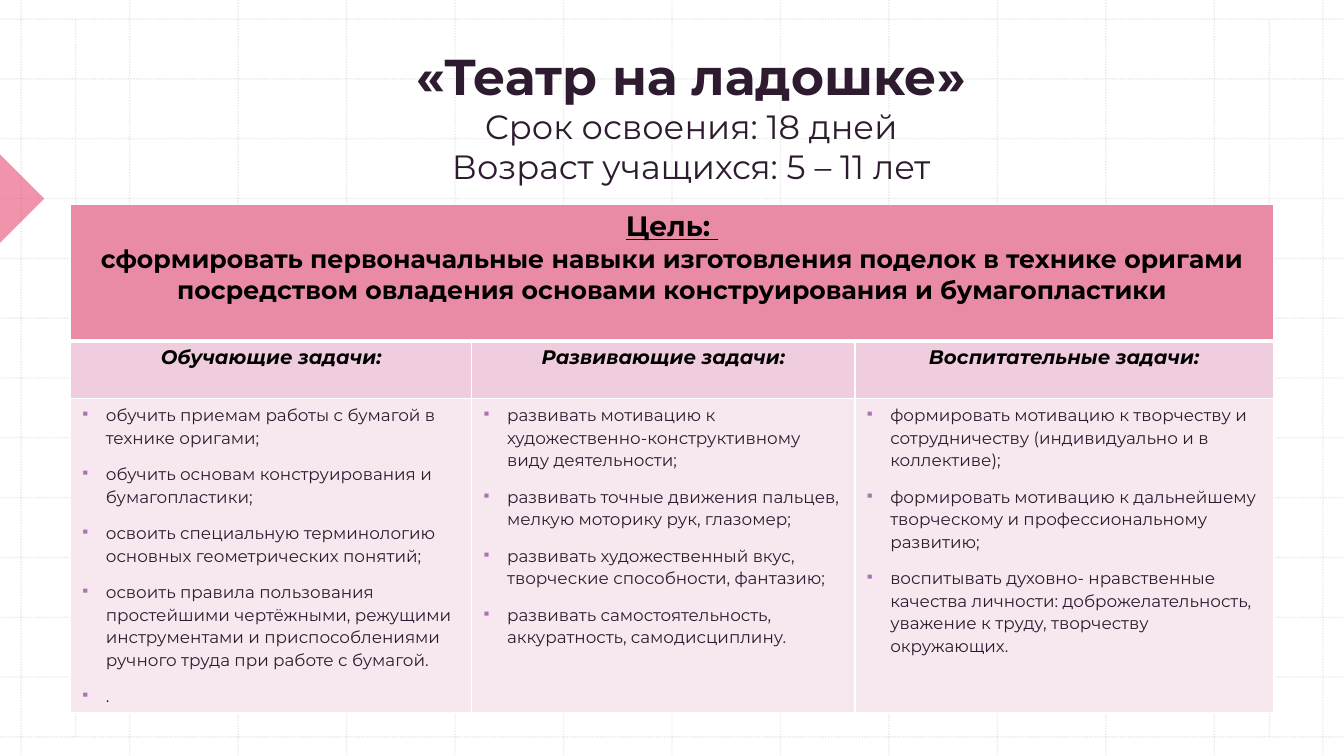
from lxml import etree
from pptx import Presentation
from pptx import util as u
from pptx.dml.color import RGBColor
from pptx.enum import dml, shapes, text
from pptx.oxml.ns import qn

# Content
TITLE_LINES = [  # wording, size, bold
    ("«Театр на ладошке»", 36, True),
    ("Срок освоения: 18 дней", 24, False),
    ("Возраст учащихся: 5 – 11 лет", 24, False),
]
GOAL_LABEL = "Цель: "
GOAL = ("сформировать первоначальные навыки изготовления поделок в технике оригами "
        "посредством овладения основами конструирования и бумагопластики")
TASKS = {
    "Обучающие задачи:": [
        "обучить приемам работы с бумагой в технике оригами;",
        "обучить основам конструирования и бумагопластики;",
        "освоить специальную терминологию основных геометрических понятий;",
        "освоить правила пользования простейшими чертёжными, режущими "
        "инструментами и приспособлениями ручного труда при работе с бумагой.",
        ".",
    ],
    "Развивающие задачи:": [
        "развивать мотивацию к художественно-конструктивному виду деятельности;",
        "развивать точные движения пальцев, мелкую моторику рук, глазомер;",
        "развивать художественный вкус, творческие способности, фантазию;",
        "развивать самостоятельность, аккуратность, самодисциплину.",
    ],
    "Воспитательные задачи:": [
        "формировать мотивацию к творчеству и сотрудничеству "
        "(индивидуально и в коллективе);",
        "формировать мотивацию к дальнейшему творческому и профессиональному развитию;",
        "воспитывать духовно- нравственные качества личности: доброжелательность, "
        "уважение к труду, творчеству окружающих.",
    ],
}

# Style
FONT = "Montserrat"
BLACK = RGBColor(0x00, 0x00, 0x00)
WHITE = RGBColor(0xFF, 0xFF, 0xFF)
PLUM = RGBColor(0x2E, 0x1B, 0x30)
VIOLET = RGBColor(0xAB, 0x74, 0xB1)
CRIMSON = RGBColor(0xE7, 0x29, 0x5E)
GRID_GREY = RGBColor(0xBC, 0xBC, 0xBC)
GOAL_FILL = RGBColor(0xEA, 0x8B, 0xA5)
HEAD_FILL = RGBColor(0xEF, 0xCC, 0xDE)
BODY_FILL = RGBColor(0xF7, 0xE8, 0xEF)

# Layout in inches
WIDTH, HEIGHT = 13.33, 7.5
GRID_LEFT, GRID_RIGHT, GRID_TOP, GRID_BOTTOM = 0.21, 13.12, 0.19, 7.31
GRID_STEPS = 12
INNER_VERTICALS = (0.75, 12.59)
TABLE_LEFT, TABLE_TOP = 0.7, 2.03
COLUMNS = (3.98, 3.8, 4.15)
ROWS = (1.35, 0.57, 3.11)


def add_child(parent, tag, **attributes):
    return etree.SubElement(parent, qn(tag), attributes)


def set_alpha(properties, percent):
    color = next(properties.iter(qn("a:srgbClr")))
    add_child(color, "a:alpha", val=str(percent * 1000))


def add_span(para, words, size, color, bold=False, italic=False, underline=False):
    span = para.add_run()
    span.text = words
    font = span.font
    font.name, font.size, font.color.rgb = FONT, u.Pt(size), color
    font.bold, font.italic, font.underline = bold, italic, underline


def add_grid_line(page, x1, y1, x2, y2):
    line = page.shapes.add_connector(
        shapes.MSO_CONNECTOR.STRAIGHT, *map(u.Inches, (x1, y1, x2, y2)))
    line.line.color.rgb = GRID_GREY
    line.line.width = u.Pt(1)
    line.line.dash_style = dml.MSO_LINE.ROUND_DOT
    properties = line.element.spPr
    set_alpha(properties, 30)
    add_child(properties, "a:effectLst")


def style_cell(cell, fill, bottom_width=1):
    cell.fill.solid()
    cell.fill.fore_color.rgb = fill
    properties = cell._tc.get_or_add_tcPr()
    for place, side in enumerate("LRTB"):
        width = bottom_width if side == "B" else 1
        border = etree.Element(qn("a:ln" + side), w=str(u.Pt(width)))
        add_child(add_child(border, "a:solidFill"), "a:srgbClr", val=str(WHITE))
        properties.insert(place, border)


def add_bullet(para):
    para.line_spacing = 1.1
    para.space_before = u.Pt(10)
    properties = para._p.get_or_add_pPr()
    properties.set("marL", str(u.Inches(0.25)))
    properties.set("indent", str(-u.Inches(0.25)))
    add_child(add_child(properties, "a:buClr"), "a:srgbClr", val=str(VIOLET))
    add_child(properties, "a:buSzPct", val="75000")
    add_child(properties, "a:buChar", char="▪")


def add_background(page):
    for step in range(GRID_STEPS + 1):
        share = step / GRID_STEPS
        x = GRID_LEFT + share * (GRID_RIGHT - GRID_LEFT)
        y = GRID_TOP + share * (GRID_BOTTOM - GRID_TOP)
        add_grid_line(page, x, 0, x, HEIGHT)
        add_grid_line(page, 0, y, WIDTH, y)
    for x in INNER_VERTICALS:
        add_grid_line(page, x, GRID_TOP, x, GRID_BOTTOM)

    # Side pointer
    pointer = page.shapes.add_shape(
        shapes.MSO_SHAPE.RIGHT_TRIANGLE, *map(u.Inches, (-0.31, 1.66, 0.62, 0.62)))
    pointer.rotation = 225
    pointer.shadow.inherit = False
    pointer.fill.solid()
    pointer.fill.fore_color.rgb = CRIMSON
    set_alpha(pointer.element.spPr, 50)
    pointer.line.fill.background()


def add_table(page):
    frame = page.shapes.add_table(
        len(ROWS), len(COLUMNS), *map(u.Inches, (TABLE_LEFT, TABLE_TOP, sum(COLUMNS), sum(ROWS))))
    table = frame.table
    for column, width in zip(table.columns, COLUMNS):
        column.width = u.Inches(width)
    for row, height in zip(table.rows, ROWS):
        row.height = u.Inches(height)

    # Goal row
    for cell in table.rows[0].cells:
        style_cell(cell, GOAL_FILL, bottom_width=3)
    goal = table.cell(0, 0)
    goal.merge(table.cell(0, len(COLUMNS) - 1))
    label = goal.text_frame.paragraphs[0]
    add_span(label, GOAL_LABEL, 20, BLACK, bold=True, underline=True)
    wording = goal.text_frame.add_paragraph()
    add_span(wording, GOAL, 18, BLACK, bold=True)
    label.alignment = wording.alignment = text.PP_ALIGN.CENTER

    # Task columns
    for index, (heading, tasks) in enumerate(TASKS.items()):
        head, body = table.cell(1, index), table.cell(2, index)
        style_cell(head, HEAD_FILL)
        style_cell(body, BODY_FILL)
        para = head.text_frame.paragraphs[0]
        para.alignment = text.PP_ALIGN.CENTER
        add_span(para, heading, 14, BLACK, bold=True, italic=True)
        for number, task in enumerate(tasks):
            box = body.text_frame
            para = box.add_paragraph() if number else box.paragraphs[0]
            add_bullet(para)
            add_span(para, task, 12, PLUM)


def place_title(page):
    title = page.shapes.title
    title.left, title.top, title.width, title.height = map(u.Inches, (1.21, 0.3, 11.29, 1.6))
    box = title.text_frame
    box.word_wrap = True
    box.auto_size = text.MSO_AUTO_SIZE.NONE
    box.vertical_anchor = text.MSO_ANCHOR.BOTTOM
    para = box.paragraphs[0]
    para.alignment = text.PP_ALIGN.CENTER
    for number, (words, size, bold) in enumerate(TITLE_LINES):
        if number:
            para.add_line_break()
        add_span(para, words, size, PLUM, bold=bold)
    # Bring the title in front of the grid
    title.element.getparent().append(title.element)


def main():
    deck = Presentation()
    deck.slide_width, deck.slide_height = u.Inches(WIDTH), u.Inches(HEIGHT)
    page = deck.slides.add_slide(deck.slide_layouts[5])
    page.background.fill.solid()
    page.background.fill.fore_color.rgb = WHITE
    add_background(page)
    add_table(page)
    place_title(page)
    deck.save("out.pptx")


if __name__ == "__main__":
    main()
